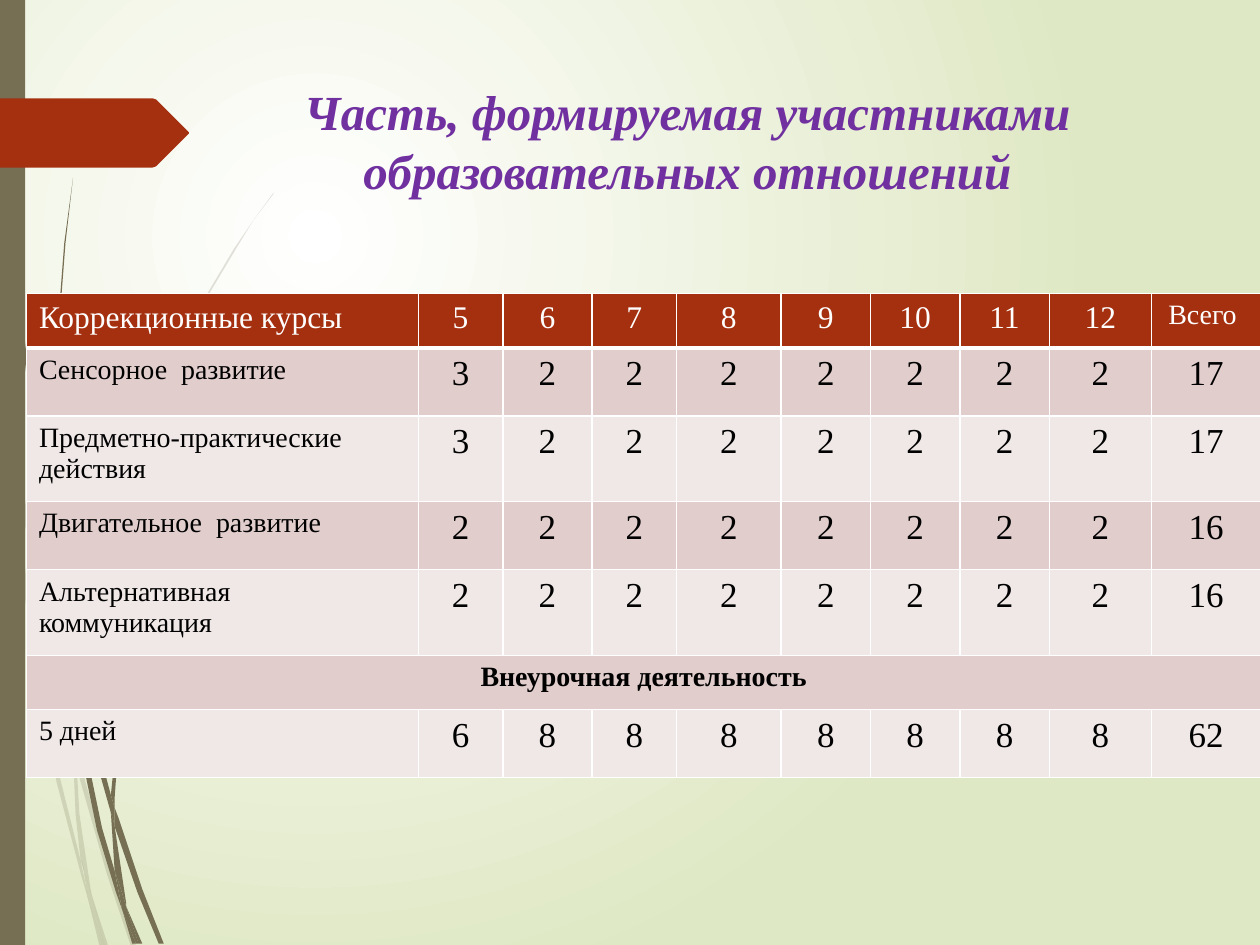
from lxml import etree
from pptx import Presentation
from pptx.dml.color import RGBColor
from pptx.enum.shapes import MSO_SHAPE
from pptx.enum.text import MSO_ANCHOR, PP_ALIGN
from pptx.oxml.ns import qn
from pptx.util import Pt

LEFT, CENTER = PP_ALIGN.LEFT, PP_ALIGN.CENTER
TOP = MSO_ANCHOR.TOP
RECTANGLE = MSO_SHAPE.RECTANGLE
OLIVE = RGBColor(0x76, 0x6F, 0x54)
RUST = RGBColor(0xA5, 0x30, 0x10)
PURPLE = RGBColor(0x70, 0x30, 0xA0)
DARK_BAND = RGBColor(0xE1, 0xCD, 0xCC)
LIGHT_BAND = RGBColor(0xF0, 0xE8, 0xE7)
PALE_GREEN = RGBColor(0xDF, 0xE8, 0xC4)
WHITE = RGBColor(0xFF, 0xFF, 0xFF)
BLACK = RGBColor(0, 0, 0)
FONT = "Times New Roman"
GRID = Pt(0.72)  # outlines are drawn on a grid of 100 steps to the inch

# Grass blades as corner points on the grid
PALE_BLADES = [
    [(8, 350), (6, 322), (0, 282), (0, 299), (7, 344)],
    [(40, 522), (59, 599), (59, 586), (43, 520), (10, 345), (12, 376)],
    [(64, 607), (61, 596), (61, 610), (85, 694), (104, 751), (108, 751), (88, 692)],
    [(83, 751), (86, 751), (73, 711)],
    [(64, 683), (48, 619), (22, 469), (12, 376), (8, 350), (19, 470), (45, 621),
     (64, 693), (70, 714), (69, 707)],
    [(58, 599), (60, 646), (64, 683), (67, 692), (73, 711), (72, 706), (63, 646),
     (61, 610), (61, 608)],
    [(61, 584), (65, 522), (76, 462), (92, 404), (111, 349), (134, 295), (159, 245),
     (187, 198), (201, 175), (217, 154), (217, 153), (201, 175), (186, 197), (158, 244),
     (133, 294), (110, 348), (91, 403), (75, 461), (63, 521), (59, 584), (59, 586),
     (61, 596)],
    [(70, 714), (79, 751), (82, 751)],
    [(61, 608), (61, 610), (61, 596), (59, 586), (58, 599)],
    [(67, 692), (65, 683), (69, 707), (70, 714), (82, 751), (83, 751), (73, 711)],
]
DARK_BLADES = [
    [(5, 110), (14, 233), (27, 355), (46, 477), (47, 481), (45, 457), (45, 453),
     (30, 355), (15, 232), (6, 109), (4, 48), (3, 0), (2, 0), (3, 48)],
    [(73, 592), (88, 645), (88, 633), (88, 631), (77, 590), (50, 472), (53, 505)],
    [(94, 649), (91, 641), (91, 656), (109, 708), (126, 749), (130, 749), (113, 706)],
    [(91, 691), (81, 657), (60, 556), (53, 505), (47, 477), (56, 557), (77, 659),
     (92, 708), (97, 722), (96, 717)],
    [(50, 472), (48, 453), (44, 349), (48, 245), (52, 193), (58, 141), (51, 193),
     (47, 245), (43, 349), (45, 449), (49, 472)],
    [(110, 749), (113, 749), (100, 719)],
    [(47, 477), (53, 505), (50, 472), (49, 472), (45, 449), (45, 453)],
    [(91, 633), (94, 592), (103, 552), (115, 513), (131, 476), (169, 406), (191, 374),
     (203, 359), (216, 344), (215, 344), (203, 358), (191, 373), (168, 405), (129, 474),
     (113, 511), (101, 551), (92, 591), (88, 631), (91, 641)],
    [(97, 722), (105, 749), (108, 749)],
    [(88, 645), (91, 691), (96, 706), (100, 719), (100, 716), (91, 656), (90, 651)],
    [(88, 645), (90, 651), (91, 656), (91, 641), (88, 631), (88, 633)],
    [(96, 706), (91, 691), (96, 717), (97, 722), (108, 749), (110, 749), (100, 719)],
]
ARROW = [(0, 78), (121, 78), (124, 79), (149, 104), (150, 105), (150, 106), (149, 107),
         (124, 132), (121, 133), (0, 133)]

COLUMN_WIDTHS = [224, 48.2, 51.1, 48.2, 59.8, 51.1, 51.1, 51.1, 58.3, 62.6]
ROW_HEIGHTS = [31, 38.9, 49, 38.9, 49, 31, 38.9]
ROWS = [
    ["Коррекционные курсы", *range(5, 13), "Всего "],
    ["Сенсорное  развитие", 3, *[2] * 7, 17],
    ["Предметно-практические  действия", 3, *[2] * 7, 17],
    ["Двигательное  развитие", *[2] * 8, 16],
    ["Альтернативная  коммуникация", *[2] * 8, 16],
    ["Внеурочная деятельность"],
    ["5 дней", 6, *[8] * 7, 62],
]


def write(frame, text, size, color, align=CENTER, bold=False, italic=False):
    para = frame.paragraphs[0]
    para.alignment = align
    span = para.add_run()
    span.text = text
    span.font.name = FONT
    span.font.size = Pt(size)
    span.font.bold = bold
    span.font.italic = italic
    span.font.color.rgb = color


def draw_outline(shapes, points, color):
    builder = shapes.build_freeform(*points[0], scale=GRID)
    builder.add_line_segments(points[1:], close=True)
    outline = builder.convert_to_shape()
    outline.shadow.inherit = False
    outline.fill.solid()
    outline.fill.fore_color.rgb = color
    outline.line.fill.background()
    return outline


deck = Presentation()
deck.slide_width, deck.slide_height = Pt(720), Pt(540)
page = deck.slides.add_slide(deck.slide_layouts[6])

# Background: light spreading from the upper left
backdrop = page.background.fill
backdrop.gradient()
for stop, color, position in zip(backdrop.gradient_stops, (WHITE, PALE_GREEN), (0, 1)):
    stop.color.rgb = color
    stop.position = position
gradient = page.element.find(".//" + qn("a:gradFill"))
gradient.remove(gradient.find(qn("a:lin")))
circle = etree.SubElement(gradient, qn("a:path"), path="circle")
etree.SubElement(circle, qn("a:fillToRect"), l="50000", t="50000", r="100000", b="100000")

# Grass, side bar and arrow
pale_grass = page.shapes.add_group_shape()
for blade in PALE_BLADES:
    outline = draw_outline(pale_grass.shapes, blade, OLIVE)
    tint = outline.element.spPr.find(qn("a:solidFill"))[0]
    etree.SubElement(tint, qn("a:alpha"), val="20000")
dark_grass = page.shapes.add_group_shape()
for blade in DARK_BLADES:
    draw_outline(dark_grass.shapes, blade, OLIVE)

side_bar = page.shapes.add_shape(RECTANGLE, 0, 0, Pt(14.4), Pt(540))
side_bar.shadow.inherit = False
side_bar.fill.solid()
side_bar.fill.fore_color.rgb = OLIVE
side_bar.line.fill.background()
draw_outline(page.shapes, ARROW, RUST)

# Title
title_box = page.shapes.add_textbox(Pt(76.3), Pt(43.2), Pt(632.9), Pt(54.7))
title_box.text_frame.word_wrap = True
title_box.text_frame.vertical_anchor = TOP
write(title_box.text_frame, "Часть, формируемая участниками образовательных отношений",
      28, PURPLE, bold=True, italic=True)

# Table of hours
table = page.shapes.add_table(len(ROWS), len(COLUMN_WIDTHS), Pt(15.1), Pt(167.8),
                              Pt(sum(COLUMN_WIDTHS)), Pt(sum(ROW_HEIGHTS))).table
table.first_row = False
table.horz_banding = False
for column, width in zip(table.columns, COLUMN_WIDTHS):
    column.width = Pt(width)

for row_index, values in enumerate(ROWS):
    table.rows[row_index].height = Pt(ROW_HEIGHTS[row_index])
    is_header = row_index == 0
    is_section = len(values) == 1
    band = RUST if is_header else (DARK_BAND if row_index % 2 else LIGHT_BAND)
    for column_index in range(len(COLUMN_WIDTHS)):
        cell = table.cell(row_index, column_index)
        properties = cell._tc.get_or_add_tcPr()
        for side in ("lnL", "lnR", "lnT", "lnB"):
            width = 3 if is_header and side == "lnB" else 1
            border = etree.SubElement(properties, qn(f"a:{side}"), w=str(Pt(width)))
            paint = etree.SubElement(border, qn("a:solidFill"))
            etree.SubElement(paint, qn("a:srgbClr"), val=str(WHITE))
        cell.fill.solid()
        cell.fill.fore_color.rgb = band
    if is_section:
        table.cell(row_index, 0).merge(table.cell(row_index, len(COLUMN_WIDTHS) - 1))
    for column_index, value in enumerate(values):
        is_label = column_index == 0
        if is_header:
            size = 16 if value == "Всего " else 18
        else:
            size = 16 if is_label else 20
        write(table.cell(row_index, column_index).text_frame, str(value), size,
              WHITE if is_header else BLACK,
              align=LEFT if is_label and not is_section else CENTER, bold=is_section)

deck.save("out.pptx")
